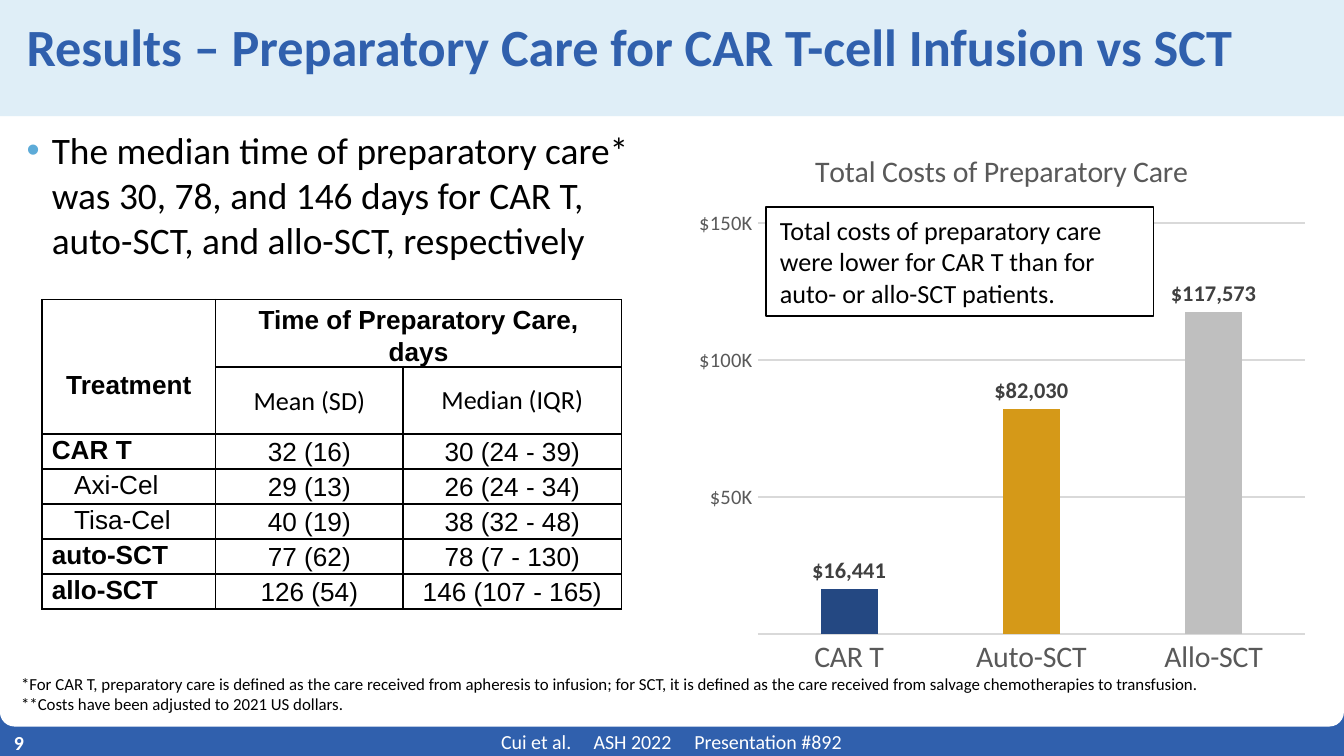
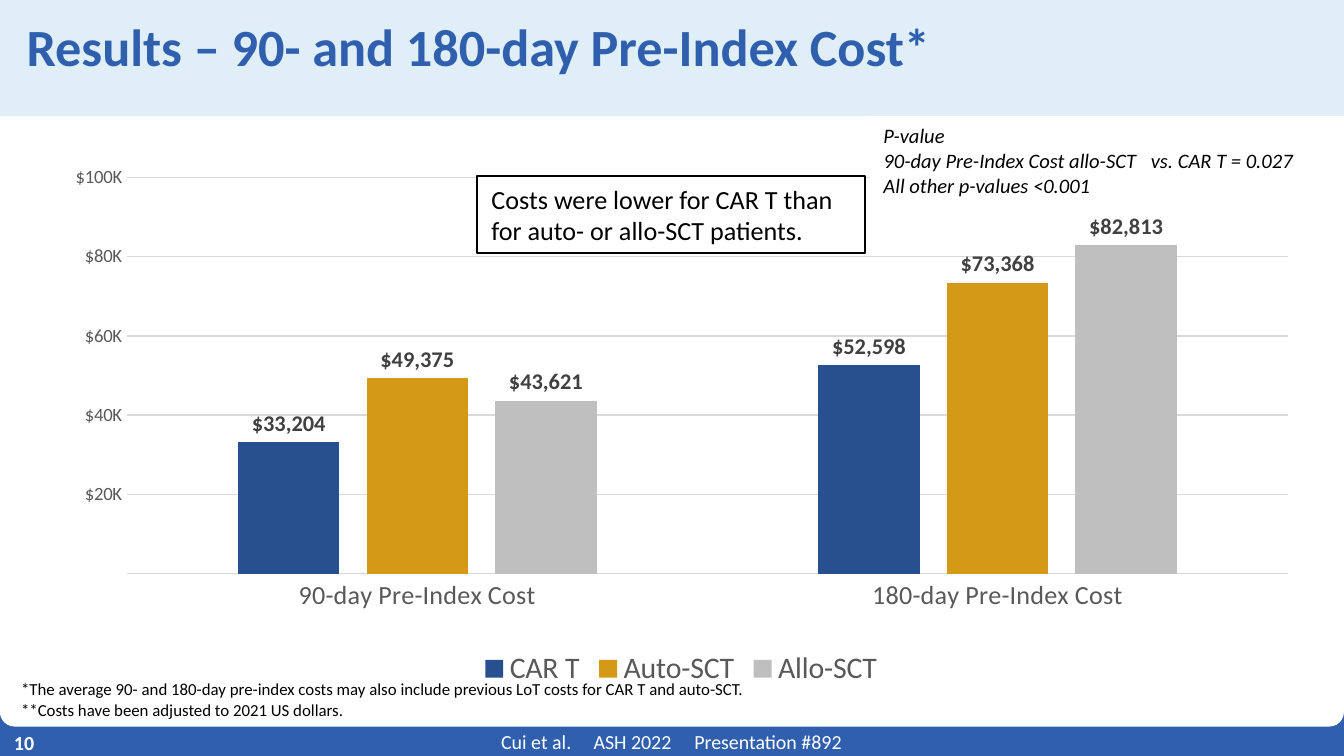
from pptx import Presentation
from pptx.chart.data import CategoryChartData
from pptx.dml.color import RGBColor
from pptx.enum.chart import XL_CHART_TYPE, XL_LABEL_POSITION, XL_LEGEND_POSITION, XL_TICK_MARK
from pptx.enum.shapes import MSO_SHAPE
from pptx.enum.text import MSO_ANCHOR, PP_ALIGN
from pptx.oxml import parse_xml
from pptx.oxml.ns import nsdecls, qn
from pptx.util import Pt

PX = 9525
RECT, ROUND = MSO_SHAPE.RECTANGLE, MSO_SHAPE.ROUND_2_SAME_RECTANGLE
TOP, MID, LOW = MSO_ANCHOR.TOP, MSO_ANCHOR.MIDDLE, MSO_ANCHOR.BOTTOM
LEFT, CENTER = PP_ALIGN.LEFT, PP_ALIGN.CENTER
BARS = XL_CHART_TYPE.COLUMN_CLUSTERED
NONE = XL_TICK_MARK.NONE
OUT = XL_LABEL_POSITION.OUTSIDE_END
BELOW = XL_LEGEND_POSITION.BOTTOM
FACE = "Calibri"
HEX = {
    "white": "FFFFFF", "black": "000000", "blue": "3060AD", "pale": "DFEEF7",
    "dot": "5DABD8", "grid": "D9D9D9", "gray": "595959", "dark": "404040",
    "navy": "244882", "steel": "28508F", "gold": "D59918", "silver": "BFBFBF",
}
RGB = {name: RGBColor.from_string(code) for name, code in HEX.items()}


def put(slide, at, lines=(), size=14, color="black", fill=None, line=None, kind=RECT,
        pad=(10, 5, 10, 5), anchor=TOP, bold=False, italic=False, tabs=()):
    spot = [n * PX for n in at]
    if fill:
        shape = slide.shapes.add_shape(kind, *spot)
        shape.shadow.inherit = False
        shape.fill.solid()
        shape.fill.fore_color.rgb = RGB[fill]
        if line:
            shape.line.color.rgb = RGB[line]
            shape.line.width = Pt(1)
        else:
            shape.line.fill.background()
    else:
        shape = slide.shapes.add_textbox(*spot)
    frame = shape.text_frame
    frame.word_wrap = True
    frame.vertical_anchor = anchor
    frame.margin_left, frame.margin_top, frame.margin_right, frame.margin_bottom = [
        n * PX for n in pad]
    frame.text = "\n".join(lines)
    for para in frame.paragraphs:
        para.alignment = LEFT
        font = para.font
        font.name, font.size, font.bold, font.italic = FACE, Pt(size), bold, italic
        font.color.rgb = RGB[color]
        if tabs:
            stops = "".join(f'<a:tab pos="{n * PX}" algn="l"/>' for n in tabs)
            para._p.pPr.find(qn("a:defRPr")).addprevious(
                parse_xml(f'<a:tabLst {nsdecls("a")}>{stops}</a:tabLst>'))
    return shape


def plot(slide, at, cats, rows, hues, sizes, top, step, area):
    data = CategoryChartData()
    data.categories = cats
    for name, vals in rows:
        data.add_series(name, vals)
    chart = slide.shapes.add_chart(BARS, *[n * PX for n in at], data).chart
    chart.font.name, chart.font.size = FACE, Pt(10)
    chart.has_title = chart.has_legend = False
    bars = chart.plots[0]
    bars.gap_width, bars.overlap, bars.vary_by_categories = 219, -27, False
    for row, hue in zip(bars.series, hues):
        row.format.fill.solid()
        row.format.fill.fore_color.rgb = RGB[hue]
        tags = row.data_labels
        tags.show_value, tags.position = True, OUT
        tags.number_format, tags.number_format_is_linked = '"$"#,##0', False
        tags.font.name, tags.font.size, tags.font.bold = FACE, Pt(12), True
        tags.font.color.rgb = RGB["dark"]
    cat, val = chart.category_axis, chart.value_axis
    for axis, size in zip((cat, val), sizes):
        axis.major_tick_mark = axis.minor_tick_mark = NONE
        font = axis.tick_labels.font
        font.name, font.size, font.color.rgb = FACE, Pt(size), RGB["gray"]
    val.minimum_scale, val.maximum_scale, val.major_unit = 0, top, step
    val.tick_labels.number_format = '[>999999]"$"#,,"M";[>0]"$"#,"K";#'
    val.tick_labels.number_format_is_linked = False
    val.format.line.fill.background()
    for rule in (cat.format.line, val.major_gridlines.format.line):
        rule.color.rgb, rule.width = RGB["grid"], Pt(0.75)
    zone = chart._chartSpace.chart.plotArea
    for old in zone.findall(qn("c:layout")):
        zone.remove(old)
    sides = "".join(f'<c:{key} val="{n}"/>' for key, n in zip("xywh", area))
    zone.insert(0, parse_xml(
        f'<c:layout {nsdecls("c")}><c:manualLayout><c:layoutTarget val="inner"/>'
        f'<c:xMode val="edge"/><c:yMode val="edge"/>{sides}</c:manualLayout></c:layout>'))
    return chart


deck = Presentation()
deck.slide_width, deck.slide_height = 960 * PX, 540 * PX
pages = [
    ("9", "Results – Preparatory Care for CAR T-cell Infusion vs SCT", 477,
     "*For CAR T, preparatory care is defined as the care received from apheresis to infusion; "
     "for SCT, it is defined as the care received from salvage chemotherapies to transfusion."),
    ("10", "Results – 90- and 180-day Pre-Index Cost*", 481,
     "*The average 90- and 180-day pre-index costs may also include previous LoT costs "
     "for CAR T and auto-SCT."),
]
for num, title, top, note in pages:
    slide = deck.slides.add_slide(deck.slide_layouts[6])
    put(slide, (0, 486, 960, 54), fill="blue")
    card = put(slide, (0, 0, 960, 519), fill="white", kind=ROUND)
    card.adjustments[0], card.adjustments[1] = 0, 0.02
    put(slide, (0, 520, 960, 20), ["Cui et al.\tASH 2022\tPresentation #892"], 10.7, "white",
        pad=(358, 0, 0, 0), anchor=MID, tabs=(66, 138))
    put(slide, (0, 516, 60, 29), [num], 10.7, "white", anchor=MID, bold=True)
    head = put(slide, (0, 0, 960, 83), [title], 28, "blue", "pale", pad=(19, 19, 19, 0), bold=True)
    head.text_frame.paragraphs[0].line_spacing = 0.8
    put(slide, (5, top, 949, 38), [note, "**Costs have been adjusted to 2021 US dollars."], 9,
        anchor=LOW)

care, cost = deck.slides
arms = ["CAR T", "Auto-SCT", "Allo-SCT"]

body = put(care, (19, 91, 451, 110), [
    "The median time of preparatory care* was 30, 78, and 146 days for CAR T, "
    "auto-SCT, and allo-SCT, respectively"], 20, pad=(0, 0, 0, 0))
para = body.text_frame.paragraphs[0]
para.space_after = Pt(3)
props = para._p.pPr
props.set("marL", str(18 * PX))
props.set("indent", str(-18 * PX))
for mark in (f'<a:buClr {nsdecls("a")}><a:srgbClr val="{HEX["dot"]}"/></a:buClr>',
             f'<a:buFont {nsdecls("a")} typeface="Arial"/>',
             f'<a:buChar {nsdecls("a")} char="•"/>'):
    props.find(qn("a:defRPr")).addprevious(parse_xml(mark))

name = "Total Costs of Preparatory Care"
chart = plot(care, (490, 91, 451, 400), arms, [(name, (16441, 82030, 117573))], ["gold"],
             (16, 11), 150000, 50000, (0.114, 0.171, 0.866, 0.734))
for i, hue in enumerate(("navy", "gold", "silver")):
    fill = chart.plots[0].series[0].points[i].format.fill
    fill.solid()
    fill.fore_color.rgb = RGB[hue]
chart.has_title = True
chart.chart_title.include_in_layout = False
chart.chart_title.text_frame.text = name
font = chart.chart_title.text_frame.paragraphs[0].font
font.name, font.size, font.bold, font.color.rgb = FACE, Pt(16), False, RGB["gray"]
put(care, (547, 148, 277, 78), [
    "Total costs of preparatory care were lower for CAR T than for auto- or allo-SCT patients."],
    fill="white", line="black")

rows = [
    ("Treatment", "Time of Preparatory Care, days", ""),
    ("", "Mean (SD)", "Median (IQR)"),
    ("CAR T", "32 (16)", "30 (24 - 39)"),
    ("Axi-Cel", "29 (13)", "26 (24 - 34)"),
    ("Tisa-Cel", "40 (19)", "38 (32 - 48)"),
    ("auto-SCT", "77 (62)", "78 (7 - 130)"),
    ("allo-SCT", "126 (54)", "146 (107 - 165)"),
]
grid = care.shapes.add_table(7, 3, 30 * PX, 214 * PX, 414 * PX, 195 * PX).table
grid.first_row = grid.horz_banding = False
for col, wide in zip(grid.columns, (124, 134, 156)):
    col.width = wide * PX
for row, high in zip(grid.rows, [24, 46] + [25] * 5):
    row.height = high * PX
grid.cell(0, 0).merge(grid.cell(1, 0))
grid.cell(0, 1).merge(grid.cell(0, 2))
for r, row in enumerate(rows):
    for c, text in enumerate(row):
        cell = grid.cell(r, c)
        cell.fill.background()
        for i, side in enumerate("LRTB"):
            cell._tc.get_or_add_tcPr().insert(i, parse_xml(
                f'<a:ln{side} {nsdecls("a")} w="12700"><a:solidFill>'
                f'<a:srgbClr val="{HEX["black"]}"/></a:solidFill></a:ln{side}>'))
        sub = text in ("Axi-Cel", "Tisa-Cel")
        data = r > 1 and c > 0
        cell.margin_left = (1 if data else 23 if sub else 7) * PX
        cell.margin_right = (1 if data else 7) * PX
        cell.margin_top = (1 if data else 0) * PX
        cell.margin_bottom = (24 if text == "Treatment" else 0) * PX
        cell.vertical_anchor = LOW if r == 0 else MID if c else TOP
        if not text:
            continue
        cell.text = text
        para = cell.text_frame.paragraphs[0]
        para.alignment = CENTER if r < 2 or c else LEFT
        if not data and text != "Median (IQR)":
            para.line_spacing = 1.07
        font = para.font
        font.name, font.size = FACE if r == 1 else "Arial", Pt(14)
        font.bold = r == 0 or (c == 0 and not sub)
        font.color.rgb = RGB["black"]

pairs = [(33204, 52598), (49375, 73368), (43621, 82813)]
chart = plot(cost, (37, 101, 899, 394), ["90-day Pre-Index Cost", "180-day Pre-Index Cost"],
             zip(arms, pairs), ("steel", "gold", "silver"), (14, 10), 100000, 20000,
             (0.06, 0.065, 0.922, 0.719))
chart.has_legend = True
key = chart.legend
key.position, key.include_in_layout = BELOW, False
key.font.name, key.font.size, key.font.color.rgb = FACE, Pt(16), RGB["gray"]
put(cost, (341, 126, 277, 55), [
    "Costs were lower for CAR T than for auto- or allo-SCT patients."], fill="white", line="black")
put(cost, (621, 83, 339, 63), [
    "P-value", "90-day Pre-Index Cost allo-SCT\tvs. CAR T = 0.027", "All other p-values <0.001"],
    11, fill="white", italic=True, tabs=(191,))

deck.save("out.pptx")
